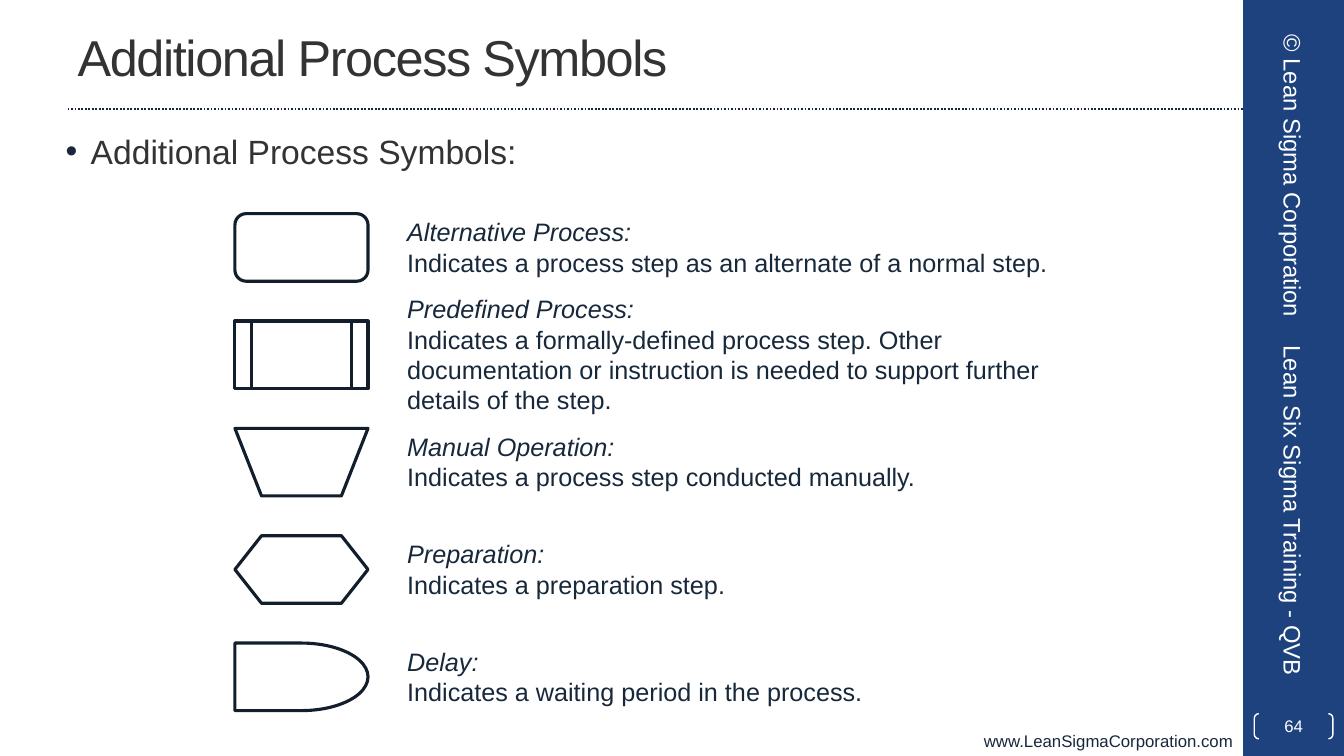
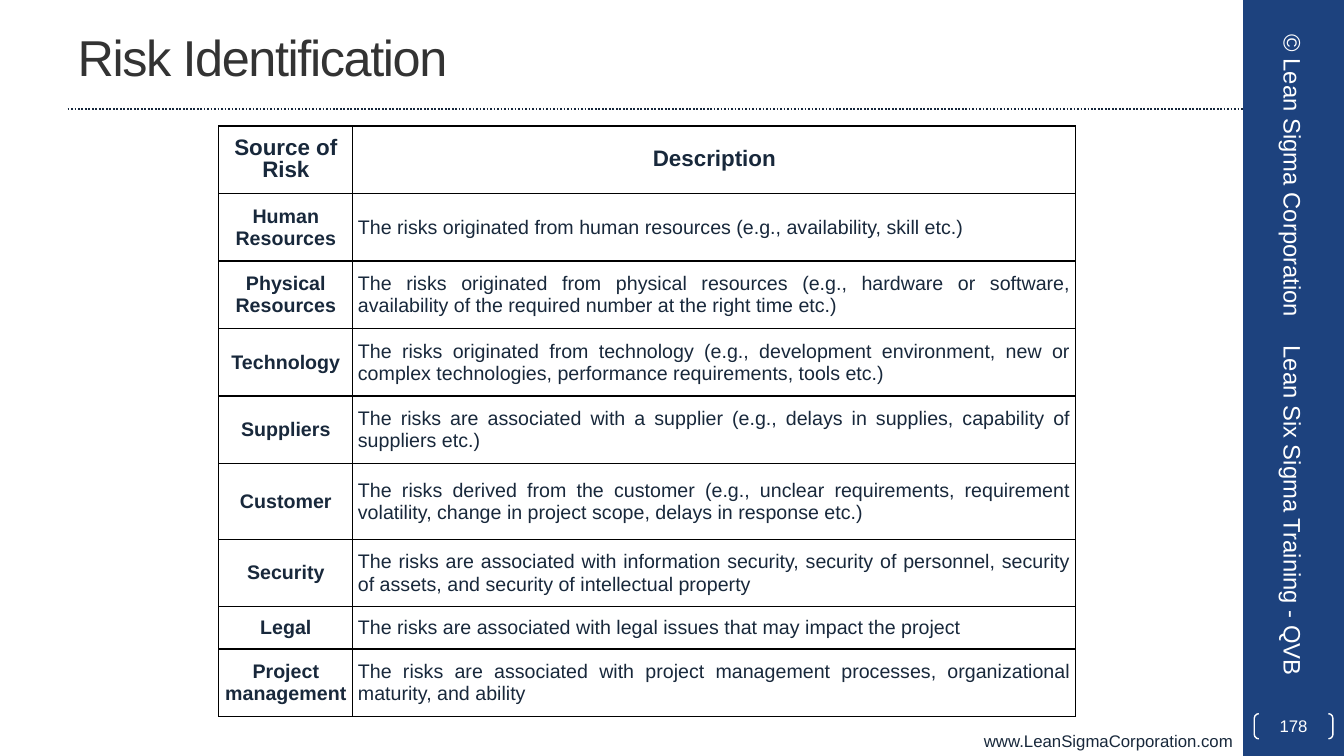
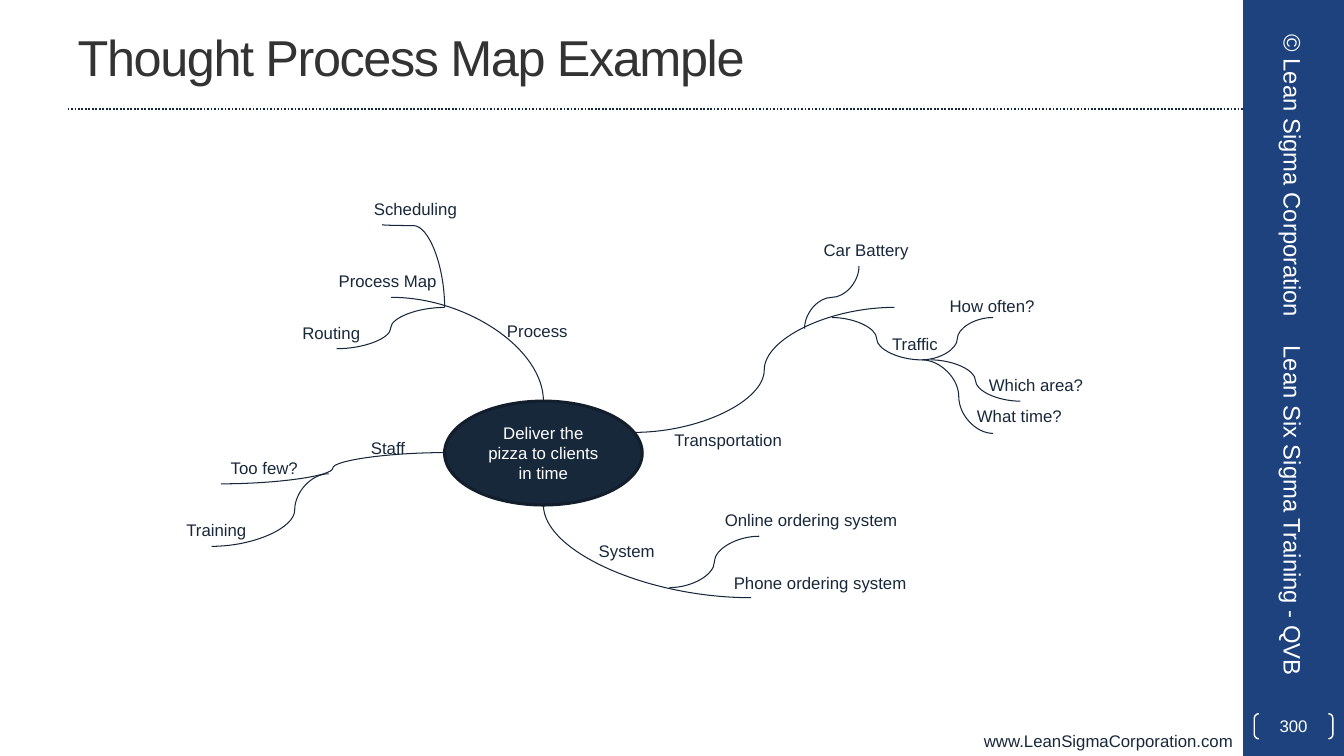
from lxml import etree
from pptx import Presentation
from pptx.dml.color import RGBColor
from pptx.enum.dml import MSO_LINE
from pptx.enum.shapes import MSO_CONNECTOR, MSO_SHAPE
from pptx.enum.text import MSO_ANCHOR, MSO_AUTO_SIZE, PP_ALIGN
from pptx.oxml.ns import qn
from pptx.util import Inches, Pt

BAND_BLUE = RGBColor(0x1D, 0x42, 0x7E)
INK = RGBColor(0x18, 0x28, 0x3B)
RULE = RGBColor(0x17, 0x27, 0x3B)
OUTLINE = RGBColor(0x12, 0x1E, 0x2C)
GREY = RGBColor(0x33, 0x33, 0x33)
WHITE = RGBColor(0xFF, 0xFF, 0xFF)
FONT = "Arial"

LEFT, CENTER, RIGHT, JUSTIFY = PP_ALIGN.LEFT, PP_ALIGN.CENTER, PP_ALIGN.RIGHT, PP_ALIGN.JUSTIFY
MIDDLE, TOP = MSO_ANCHOR.MIDDLE, MSO_ANCHOR.TOP
FIT_SHAPE = MSO_AUTO_SIZE.SHAPE_TO_FIT_TEXT
STRAIGHT, CURVE = MSO_CONNECTOR.STRAIGHT, MSO_CONNECTOR.CURVE
DOTTED = MSO_LINE.ROUND_DOT
RECTANGLE, ELLIPSE, BRACKETS = MSO_SHAPE.RECTANGLE, MSO_SHAPE.OVAL, MSO_SHAPE.DOUBLE_BRACKET

TITLE_AND_BODY, TITLE_ONLY = 1, 5
SLIDE_WIDTH, SLIDE_HEIGHT = 13.33, 7.5
BAND_LEFT = 12.33

SYMBOLS = [
    (MSO_SHAPE.FLOWCHART_ALTERNATE_PROCESS, 0.71, "Alternative Process:",
     "Indicates a process step as an alternate of a normal step."),
    (MSO_SHAPE.FLOWCHART_PREDEFINED_PROCESS, 1.31, "Predefined Process:",
     "Indicates a formally-defined process step. Other documentation or "
     "instruction is needed to support further details of the step."),
    (MSO_SHAPE.FLOWCHART_MANUAL_OPERATION, 0.71, "Manual Operation:",
     "Indicates a process step conducted manually."),
    (MSO_SHAPE.FLOWCHART_PREPARATION, 0.71, "Preparation:",
     "Indicates a preparation step."),
    (MSO_SHAPE.FLOWCHART_DELAY, 0.71, "Delay:",
     "Indicates a waiting period in the process."),
]

RISKS = [
    (0.67, "Source of Risk", "Description"),
    (0.67, "Human Resources",
     "The risks originated from human resources (e.g., availability, skill etc.)"),
    (0.67, "Physical Resources",
     "The risks originated from physical resources (e.g., hardware or software, "
     "availability of the required number at the right time etc.)"),
    (0.67, "Technology",
     "The risks originated from technology (e.g., development environment, new or "
     "complex technologies, performance requirements, tools etc.)"),
    (0.67, "Suppliers",
     "The risks are associated with a supplier (e.g., delays in supplies, "
     "capability of suppliers etc.)"),
    (0.75, "Customer",
     "The risks derived from the customer (e.g., unclear requirements, requirement "
     "volatility, change in project scope, delays in response etc.)"),
    (0.67, "Security",
     "The risks are associated with information security, security of personnel, "
     "security of assets, and security of intellectual property"),
    (0.42, "Legal",
     "The risks are associated with legal issues that may impact the project"),
    (0.67, "Project management",
     "The risks are associated with project management processes, organizational "
     "maturity, and ability"),
]

IDEAS = [
    ("Transportation", 5.59, 3.21, 1.28), ("Staff", 2.58, 3.29, 0.55),
    ("System", 4.84, 4.32, 0.76), ("Process", 3.93, 2.13, 0.81),
    ("Car Battery", 7.07, 1.33, 1.05), ("Traffic", 7.75, 2.26, 0.66),
    ("How often?", 8.32, 1.88, 1.05), ("Which area?", 8.71, 2.67, 1.14),
    ("What time?", 8.59, 2.98, 1.05), ("Training", 0.75, 4.11, 0.8),
    ("Too few?", 1.19, 3.49, 0.87), ("Scheduling", 2.61, 0.92, 1.03),
    ("Routing", 1.9, 2.15, 0.78), ("Process Map", 2.26, 1.64, 1.18),
    ("Online ordering system", 6.09, 4.01, 1.93),
    ("Phone ordering system", 6.18, 4.63, 1.93),
]

SIDEWAYS_BRANCHES = [
    ((5.29, 3.29), (7.87, 2.05), 0.5), ((3.41, 3.49), (1.19, 3.8), 0.5),
    ((7.25, 2.15), (8.14, 2.57), 0.5), ((8.14, 2.57), (8.85, 3.3), 0.52),
    ((8.14, 2.57), (8.85, 2.15), 0.5), ((8.23, 2.57), (9.12, 2.98), 0.5),
    ((2.26, 3.7), (1.1, 4.42), 0.29), ((2.34, 2.46), (3.41, 2.05), 0.5),
    ((5.64, 4.83), (6.53, 4.32), 0.5),
]
UPRIGHT_BRANCHES = [
    ((6.98, 2.26), (7.52, 1.64), 0.5), ((3.41, 2.05), (2.79, 1.23), 0.99),
]
QUARTER_BRANCHES = [((2.88, 1.95), (4.39, 2.98)), ((6.45, 4.93), (4.39, 4.01))]


def inches(*values):
    """Turn numbers into lengths."""
    return [Inches(value) for value in values]


def add_span(para, text, size, color, bold=False, italic=False):
    """Add one formatted run."""
    span = para.add_run()
    span.text = text
    font = span.font
    font.name, font.size, font.bold, font.italic = FONT, Pt(size), bold, italic
    font.color.rgb = color
    return span


def add_text(page, box, text, size, color, align=LEFT, anchor=TOP, wrap=True):
    """Add a text box holding one paragraph."""
    shape = page.shapes.add_textbox(*inches(*box))
    frame = shape.text_frame
    frame.word_wrap = wrap
    frame.vertical_anchor = anchor
    frame.paragraphs[0].alignment = align
    add_span(frame.paragraphs[0], text, size, color)
    return shape


def add_figure(page, kind, box, fill=None, line=None, weight=1):
    """Add a flat preset shape."""
    shape = page.shapes.add_shape(kind, *inches(*box))
    shape.shadow.inherit = False
    if fill is None:
        shape.fill.background()
    else:
        shape.fill.solid()
        shape.fill.fore_color.rgb = fill
    if line is None:
        shape.line.fill.background()
    else:
        shape.line.color.rgb = line
        shape.line.width = Pt(weight)
    return shape


def add_line(page, kind, start, end, weight):
    """Add a connector without a shadow."""
    line = page.shapes.add_connector(kind, *inches(*start, *end))
    line.line.color.rgb = RULE
    line.line.width = Pt(weight)
    etree.SubElement(line.element.spPr, qn("a:effectLst"))
    return line


def bend_line(line, bend):
    """Set where a curved connector turns."""
    guides = line.element.spPr.find(qn("a:prstGeom")).get_or_add_avLst()
    etree.SubElement(guides, qn("a:gd"), name="adj1", fmla=f"val {round(bend * 100000)}")


def add_upright_curve(page, start, end, bend):
    """Add a curve that leaves and arrives vertically."""
    across, down = end[0] - start[0], end[1] - start[1]
    middle_x, middle_y = (start[0] + end[0]) / 2, (start[1] + end[1]) / 2
    turn = 1 if across > 0 else -1
    half_x, half_y = turn * down / 2, -turn * across / 2
    line = add_line(page, CURVE, (middle_x - half_x, middle_y - half_y),
                    (middle_x + half_x, middle_y + half_y), 0.75)
    line.element.spPr.find(qn("a:xfrm")).set("rot", str(turn * 90 % 360 * 60000))
    bend_line(line, bend)


def add_band(page, left, number):
    """Draw the side band with its two sideways texts and the page number."""
    add_figure(page, RECTANGLE, (left, 0, 1, SLIDE_HEIGHT), fill=BAND_BLUE)
    for text, box, align in (
        ("© Lean Sigma Corporation", (left - 1.09, 1.48, 3.17, 0.53), CENTER),
        ("Lean Six Sigma Training - QVB", (left - 1.34, 4.9, 3.67, 0.53), LEFT),
    ):
        add_text(page, box, text, 17, WHITE, align, MIDDLE).rotation = 90
    brackets = add_figure(page, BRACKETS, (left + 0.11, 7.08, 0.78, 0.25), line=WHITE)
    brackets.adjustments[0] = 0.18
    frame = brackets.text_frame
    frame.margin_left = frame.margin_right = frame.margin_top = frame.margin_bottom = 0
    frame.vertical_anchor = MIDDLE
    frame.paragraphs[0].alignment = CENTER
    add_span(frame.paragraphs[0], str(number), 12, WHITE)


def add_page(deck, layout, title, number):
    """Add a slide with the shared title, rule, footer and band."""
    page = deck.slides.add_slide(deck.slide_layouts[layout])
    add_band(page, BAND_LEFT, number)
    add_text(page, (0, 7.2, BAND_LEFT, 0.3), "www.LeanSigmaCorporation.com", 12, INK, RIGHT)
    rule = add_line(page, STRAIGHT, (0.67, 1.08), (BAND_LEFT, 1.08), 1.25)
    rule.line.dash_style = DOTTED
    heading = page.shapes.title
    heading.left, heading.top, heading.width, heading.height = inches(0.67, 0.03, 11.11, 1.05)
    heading.text_frame.vertical_anchor = MIDDLE
    para = heading.text_frame.paragraphs[0]
    para.alignment = LEFT
    span = add_span(para, title, 36, GREY)
    span._r.get_or_add_rPr().set("spc", "-100")
    return page


def fill_body(page, box, text):
    """Put one bulleted line into the body placeholder."""
    body = page.placeholders[1]
    body.left, body.top, body.width, body.height = inches(*box)
    para = body.text_frame.paragraphs[0]
    settings = para._p.get_or_add_pPr()
    settings.set("marL", str(Inches(0.38)))
    settings.set("indent", str(Inches(-0.25)))
    tint = etree.SubElement(settings, qn("a:buClr"))
    etree.SubElement(tint, qn("a:srgbClr"), val=str(INK))
    etree.SubElement(settings, qn("a:buChar"), char="•")
    para.space_before = Pt(0)
    add_span(para, text, 24, GREY)


def add_symbols(page, left, top):
    """Stack the process symbols with their meanings beside them."""
    width, height, pitch = 1.32, 0.67, 1.065
    for row, (kind, text_height, name, meaning) in enumerate(SYMBOLS):
        row_top = top + row * pitch
        add_figure(page, kind, (left, row_top, width, height), line=OUTLINE, weight=2.25)
        text_top = row_top + (height - text_height) / 2
        shape = page.shapes.add_textbox(*inches(left + 1.61, text_top, 7.14, text_height))
        frame = shape.text_frame
        frame.word_wrap = True
        add_span(frame.paragraphs[0], name, 18, INK, italic=True)
        add_span(frame.add_paragraph(), meaning, 18, INK)


def border_cell(cell):
    """Draw thin black borders around a cell."""
    settings = cell._tc.get_or_add_tcPr()
    for place, side in enumerate(("a:lnL", "a:lnR", "a:lnT", "a:lnB")):
        edge = etree.Element(qn(side), w=str(Pt(1)))
        paint = etree.SubElement(edge, qn("a:solidFill"))
        etree.SubElement(paint, qn("a:srgbClr"), val="000000")
        settings.insert(place, edge)


def add_risk_table(page, left, top):
    """Add the table of risk sources."""
    widths = (1.33, 7.17)
    height = sum(risk[0] for risk in RISKS)
    table = page.shapes.add_table(
        len(RISKS), len(widths), *inches(left, top, sum(widths), height)).table
    table.first_row = table.horz_banding = False
    for column, width in zip(table.columns, widths):
        column.width = Inches(width)
    for row, (row_height, *texts) in enumerate(RISKS):
        table.rows[row].height = Inches(row_height)
        for column, text in enumerate(texts):
            cell = table.cell(row, column)
            cell.fill.background()
            border_cell(cell)
            cell.vertical_anchor = MIDDLE
            cell.margin_left = cell.margin_right = Inches(0.05)
            cell.margin_top = cell.margin_bottom = 0
            is_label = row == 0 or column == 0
            para = cell.text_frame.paragraphs[0]
            para.alignment = CENTER if is_label else JUSTIFY
            para.line_spacing = Pt(16)
            add_span(para, text, 14 if row else 16, INK, bold=is_label)


def add_thought_map(page, left, top):
    """Draw the central goal, its branches and their labels."""
    def shift(point):
        """Move a point into the map's box."""
        return left + point[0], top + point[1]

    for start, end, bend in SIDEWAYS_BRANCHES:
        bend_line(add_line(page, CURVE, shift(start), shift(end), 0.75), bend)
    for start, end, bend in UPRIGHT_BRANCHES:
        add_upright_curve(page, shift(start), shift(end), bend)
    for start, end in QUARTER_BRANCHES:
        line = add_line(page, CURVE, shift(start), shift(end), 0.75)
        line.element.spPr.find(qn("a:prstGeom")).set("prst", "curvedConnector2")

    goal = add_figure(page, ELLIPSE, (*shift((3.41, 2.98)), 1.96, 1.03), INK, OUTLINE, 2.25)
    goal.text_frame.word_wrap = True
    goal.text_frame.vertical_anchor = MIDDLE
    para = goal.text_frame.paragraphs[0]
    para.alignment = CENTER
    add_span(para, "Deliver the pizza to clients in time", 12, WHITE)

    for text, label_left, label_top, width in IDEAS:
        box = (*shift((label_left, label_top)), width, 0.3)
        label = add_text(page, box, text, 12, INK, wrap=False)
        label.text_frame.auto_size = FIT_SHAPE


def main():
    """Build and save the deck."""
    deck = Presentation()
    deck.slide_width, deck.slide_height = inches(SLIDE_WIDTH, SLIDE_HEIGHT)

    page = add_page(deck, TITLE_AND_BODY, "Additional Process Symbols", 64)
    fill_body(page, (0.42, 1.25, 11.78, 6), "Additional Process Symbols:")
    add_symbols(page, 2.33, 2.12)

    page = add_page(deck, TITLE_ONLY, "Risk Identification", 178)
    add_risk_table(page, 2.17, 1.25)

    page = add_page(deck, TITLE_ONLY, "Thought Process Map Example", 300)
    add_thought_map(page, 1, 1)

    deck.save("out.pptx")


if __name__ == "__main__":
    main()
